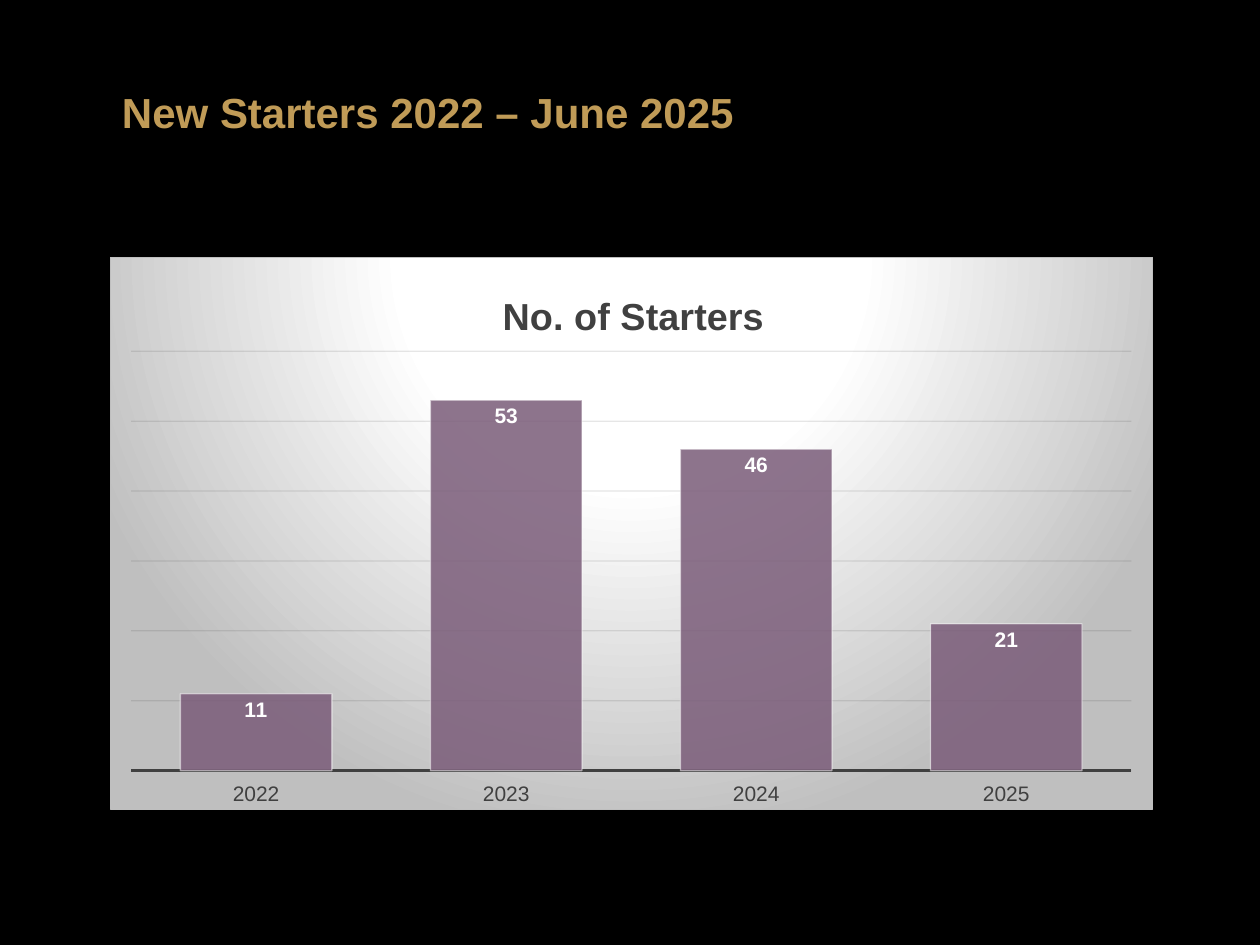
from pptx import Presentation
from pptx.chart.data import CategoryChartData as ChartData
from pptx.dml.color import RGBColor
from pptx.enum.chart import XL_CHART_TYPE as Kind, XL_LABEL_POSITION as Pos
from pptx.enum.chart import XL_TICK_LABEL_POSITION as Tick, XL_TICK_MARK as Mark
from pptx.oxml import parse_xml
from pptx.oxml.ns import nsdecls
from pptx.util import Cm, Pt

BLACK = RGBColor(0x00, 0x00, 0x00)
WHITE = RGBColor(0xFF, 0xFF, 0xFF)
GOLD = RGBColor(0xC0, 0x9B, 0x57)
PLUM = RGBColor(0x7A, 0x5C, 0x79)
DARK = RGBColor(0x40, 0x40, 0x40)
GRID = RGBColor(0x0D, 0x0D, 0x0D)
GREY = RGBColor(0xBF, 0xBF, 0xBF)

STARTS = {"2022": 11, "2023": 53, "2024": 46, "2025": 21}


def style(font, size, color, bold=False):
    font.name = "Arial"
    font.size = Pt(size)
    font.bold = bold
    font.color.rgb = color


def write(frame, text, size, color, bold=False, space=None):
    """Fill a text frame with one formatted paragraph."""
    para = frame.paragraphs[0]
    if space:
        para.line_spacing = Pt(space)
    run = para.add_run()
    run.text = text
    style(run.font, size, color, bold)


def stroke(line, color, width):
    line.color.rgb = color
    line.width = Pt(width)


def fade(root, query, alpha):
    """Give the colours found by query an opacity in percent."""
    for color in root.xpath(query):
        color.append(parse_xml(
            f'<a:alpha {nsdecls("a")} val="{alpha * 1000}"/>'))


def place(node, index, inner=False, **box):
    """Fix the layout of a chart part, in fractions of the chart."""
    for old in node.xpath("./c:layout"):
        node.remove(old)
    target = '<c:layoutTarget val="inner"/>' if inner else ""
    modes = "".join(f'<c:{k}Mode val="edge"/>' for k in "xy")
    sizes = "".join(f'<c:{k} val="{v}"/>' for k, v in box.items())
    node.insert(index, parse_xml(
        f'<c:layout {nsdecls("c")}><c:manualLayout>{target}{modes}{sizes}'
        '</c:manualLayout></c:layout>'))


def panel(root):
    """Add the radial gradient and border behind the chart."""
    stops = "".join(
        f'<a:gs pos="{pos * 1000}"><a:srgbClr val="{color}"/></a:gs>'
        for pos, color in ((0, WHITE), (39, WHITE), (100, GREY)))
    root.xpath("./c:chart")[0].addnext(parse_xml(
        f'<c:spPr {nsdecls("c", "a")}><a:gradFill><a:gsLst>{stops}</a:gsLst>'
        '<a:path path="circle"><a:fillToRect l="50000" t="-80000" r="50000"'
        ' b="180000"/></a:path></a:gradFill><a:ln w="9525"><a:solidFill>'
        f'<a:srgbClr val="{GREY}"/></a:solidFill></a:ln></c:spPr>'))


def add_bars(slide):
    data = ChartData()
    data.categories = list(STARTS)
    data.add_series("Series 1", list(STARTS.values()))
    chart = slide.shapes.add_chart(
        Kind.COLUMN_CLUSTERED, Cm(2.21), Cm(5.18), Cm(21.03), Cm(11.15),
        data).chart
    style(chart.font, 10, WHITE)
    chart.has_legend = False
    chart.has_title = True
    write(chart.chart_title.text_frame, "No. of Starters", 21.6, DARK, True)

    years = chart.category_axis
    years.major_tick_mark = years.minor_tick_mark = Mark.NONE
    years.tick_label_position = Tick.LOW
    style(years.tick_labels.font, 12, DARK)
    stroke(years.format.line, DARK, 1.5)

    scale = chart.value_axis
    scale.visible = False
    scale.minimum_scale, scale.maximum_scale, scale.major_unit = 0, 60, 10
    scale.has_major_gridlines = True
    stroke(scale.major_gridlines.format.line, GRID, 0.75)

    plot = chart.plots[0]
    plot.gap_width = 65
    plot.vary_by_categories = False
    bars = plot.series[0]
    bars.format.fill.solid()
    bars.format.fill.fore_color.rgb = PLUM
    stroke(bars.format.line, WHITE, 0.75)
    labels = bars.data_labels
    labels.show_value = True
    labels.position = Pos.INSIDE_END
    style(labels.font, 12, WHITE, True)

    root = chart._chartSpace
    fade(root, ".//c:ser/c:spPr/a:solidFill/a:srgbClr", 85)
    fade(root, ".//c:ser/c:spPr/a:ln//a:srgbClr", 50)
    fade(root, ".//c:majorGridlines//a:srgbClr", 10)
    place(root.xpath("./c:chart/c:title")[0], 1, x=0.37, y=0.05)
    place(root.xpath(".//c:plotArea")[0], 0, inner=True,
          x=0.02, y=0.17, w=0.96, h=0.76)
    panel(root)


def main():
    deck = Presentation()
    deck.slide_width, deck.slide_height = Cm(25.4), Cm(19.05)
    slide = deck.slides.add_slide(deck.slide_layouts[6])
    slide.background.fill.solid()
    slide.background.fill.fore_color.rgb = BLACK
    head = slide.shapes.add_textbox(Cm(2.21), Cm(1.65), Cm(15.01), Cm(1.4))
    head.text_frame.word_wrap = True
    write(head.text_frame, "New Starters 2022 – June 2025", 24, GOLD,
          bold=True, space=28)
    add_bars(slide)
    deck.save("out.pptx")


if __name__ == "__main__":
    main()
